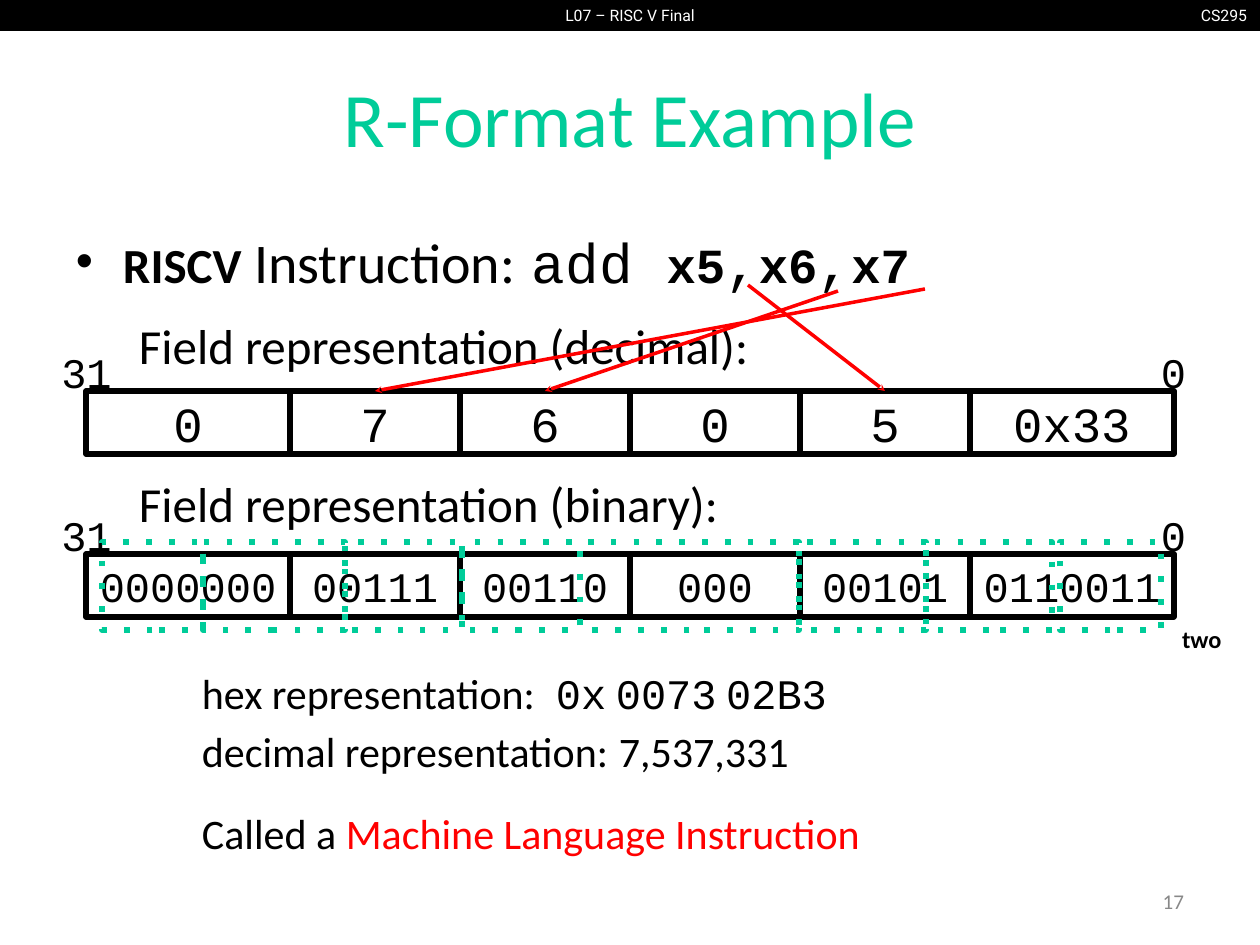
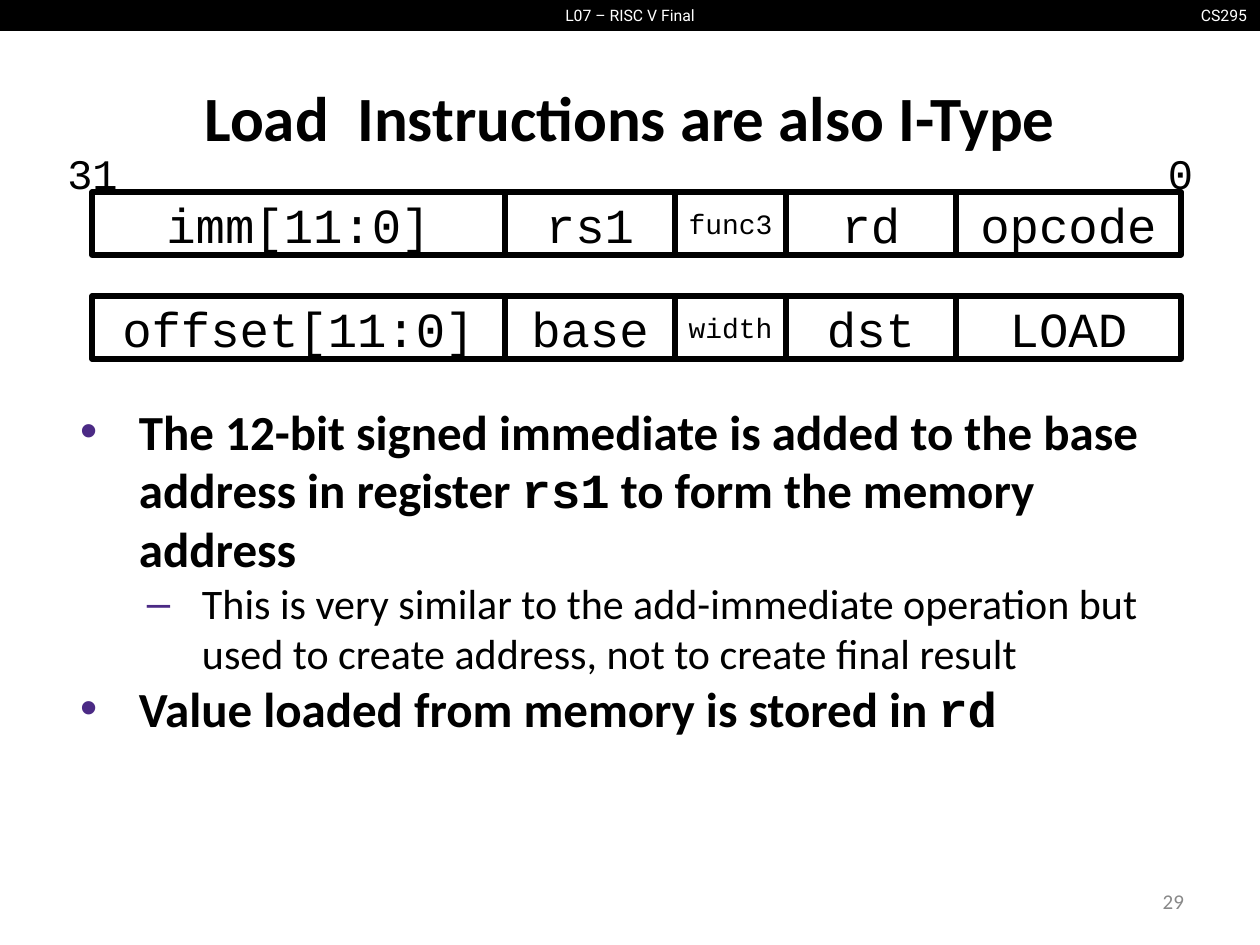
from dataclasses import dataclass
from itertools import accumulate, pairwise

from lxml import etree
from pptx import Presentation
from pptx import util as u
from pptx.dml.color import RGBColor
from pptx.enum import shapes, text
from pptx.oxml.ns import qn

PX = 914400 / 126


@dataclass(frozen=True)
class Theme:
    ink: str = "000000"
    paper: str = "FFFFFF"
    green: str = "00CC99"
    red: str = "FF0000"
    violet: str = "4B2A85"
    grey: str = "888888"
    sans: str = "Calibri"
    mono: str = "Courier New"
    band: str = "Roboto"
    title: int = 44
    heading: int = 36
    lead: int = 32
    large: int = 28
    medium: int = 24
    small: int = 16
    page: int = 12
    tiny: int = 9


T = Theme()


@dataclass
class Run:
    text: str
    size: int = T.large
    font: str = T.sans
    color: str = T.ink
    bold: bool = False
    baseline: int = 0


@dataclass
class Para:
    runs: list
    level: int = 0
    margin: int = 0
    hang: int = 0
    before: float = 0
    bullet: str = ""
    bullet_color: str = T.ink
    tab: int = 0
    align: text.PP_ALIGN = text.PP_ALIGN.LEFT


def emu(px):
    return u.Emu(round(px * PX))


def rgb(color):
    return RGBColor.from_string(color)


class Deck:
    def __init__(self):
        self.prs = Presentation()
        self.prs.slide_width, self.prs.slide_height = emu(1260), emu(945)
        self.slide = None

    def start(self, title, number):
        self.slide = self.prs.slides.add_slide(self.prs.slide_layouts[1])
        heading = self.slide.shapes.title
        self.place(heading, 63, 38, 1134, 157)
        centre = text.PP_ALIGN.CENTER
        self.fill_text(heading.text_frame, [Para([title], align=centre)], middle=True)
        self.rect(0, 0, 1260, 31, fill=T.ink)
        for label, left, width, align in (
            ("CS295", 1160, 100, text.PP_ALIGN.RIGHT),
            ("L07 – RISC V Final", 530, 200, centre),
        ):
            run = Run(label, T.tiny, T.band, T.paper)
            self.box(left, 0, width, 31, [Para([run], align=align)], pad=0, middle=True)
        page = Run(number, T.page, color=T.grey)
        self.box(903, 876, 294, 50, [Para([page], align=text.PP_ALIGN.RIGHT)], middle=True)

    def place(self, shape, left, top, width, height):
        shape.left, shape.top = emu(left), emu(top)
        shape.width, shape.height = emu(width), emu(height)

    def fill_text(self, frame, paras, side=13, pad=6, middle=False):
        frame.word_wrap = True
        frame.auto_size = text.MSO_AUTO_SIZE.NONE
        frame.margin_left = frame.margin_right = emu(side)
        frame.margin_top = frame.margin_bottom = emu(pad)
        frame.vertical_anchor = text.MSO_ANCHOR.MIDDLE if middle else text.MSO_ANCHOR.TOP
        for index, para in enumerate(paras):
            target = frame.add_paragraph() if index else frame.paragraphs[0]
            self.format_para(target, para)

    def format_para(self, target, para):
        props = target._p.get_or_add_pPr()
        props.set("marL", str(emu(para.margin)))
        props.set("indent", str(-emu(para.hang)))
        if para.bullet:
            color = etree.SubElement(props, qn("a:buClr"))
            etree.SubElement(color, qn("a:srgbClr"), val=para.bullet_color)
            etree.SubElement(props, qn("a:buFont"), typeface="Arial")
            etree.SubElement(props, qn("a:buChar"), char=para.bullet)
        else:
            etree.SubElement(props, qn("a:buNone"))
        if para.tab:
            tabs = etree.SubElement(props, qn("a:tabLst"))
            etree.SubElement(tabs, qn("a:tab"), pos=str(emu(para.tab)), algn="l")
        target.level = para.level
        target.alignment = para.align
        target.space_before = u.Pt(para.before)
        for style in para.runs:
            run = target.add_run()
            run.text = style.text
            run.font.name = style.font
            run.font.size = u.Pt(style.size)
            run.font.bold = style.bold
            run.font.color.rgb = rgb(style.color)
            if style.baseline:
                run.font._element.set("baseline", str(style.baseline))

    def body(self, left, top, width, height, paras, pad=6):
        holder = self.slide.placeholders[1]
        self.place(holder, left, top, width, height)
        self.fill_text(holder.text_frame, paras, pad=pad)

    def box(self, left, top, width, height, paras, **layout):
        box = self.slide.shapes.add_textbox(emu(left), emu(top), emu(width), emu(height))
        self.fill_text(box.text_frame, paras, **layout)

    def rect(self, left, top, width, height, fill=None, line=None, weight=3, dash=None):
        shape = self.slide.shapes.add_shape(
            shapes.MSO_SHAPE.RECTANGLE, emu(left), emu(top), emu(width), emu(height))
        shape.shadow.inherit = False
        if fill:
            shape.fill.solid()
            shape.fill.fore_color.rgb = rgb(fill)
        else:
            shape.fill.background()
        if line:
            shape.line.color.rgb = rgb(line)
            shape.line.width = u.Pt(weight)
        else:
            shape.line.fill.background()
        if dash:
            etree.SubElement(shape.line._get_or_add_ln(), qn("a:prstDash"), val=dash)
        return shape

    def fields(self, left, top, widths, labels, sizes):
        edges = list(accumulate(widths, initial=left))
        for start, width, label, size in zip(edges, widths, labels, sizes):
            cell = self.rect(start, top, width, 63, line=T.ink)
            run = Run(label, size, T.mono)
            para = Para([run], align=text.PP_ALIGN.CENTER)
            self.fill_text(cell.text_frame, [para], middle=True)
        return [(start + end) // 2 for start, end in pairwise(edges)]

    def bit_numbers(self, left, right, top):
        high, low = (Run(bit, T.medium, T.mono) for bit in ("31", "0"))
        self.box(left - 38, top - 50, 77, 63, [Para([high], align=text.PP_ALIGN.CENTER)])
        self.box(right - 26, top - 50, 50, 63, [Para([low])])

    def arrow(self, start, end):
        line = self.slide.shapes.add_connector(
            shapes.MSO_CONNECTOR.STRAIGHT, *map(emu, (*start, *end)))
        line.line.color.rgb = rgb(T.red)
        line.line.width = u.Pt(2)
        etree.SubElement(line.line._get_or_add_ln(), qn("a:tailEnd"),
                         type="stealth", w="sm", len="sm")
        etree.SubElement(line._element.spPr, qn("a:effectLst"))


def r_format_slide(deck):
    deck.start(Run("R-Format Example", T.title, color=T.green), "17")
    comma = Run(",", T.lead, T.mono)
    x5, x6, x7 = (Run(name, T.large, T.mono, bold=True) for name in ("x5", "x6", "x7"))
    instruction = [Run("RISCV", bold=True), Run(" Instruction:\t", T.lead),
                   Run("add ", T.lead, T.mono), x5, comma, x6, comma, x7]
    nested = {"level": 1, "margin": 102, "hang": 39}
    deck.body(63, 221, 1134, 433, [
        Para(instruction, margin=47, hang=47, bullet="•", tab=456),
        Para([Run("Field representation (decimal):")], before=12, **nested),
        Para([Run("Field representation (binary):")], before=57, **nested),
    ])

    left, decimal_top, binary_top = 86, 391, 554
    widths = [204, 170, 170, 170, 170, 204]
    right = left + sum(widths)
    decimal = ["0", "7", "6", "0", "5", "0x33"]
    binary = ["0000000", "00111", "00110", "000", "00101", "0110011"]
    centres = deck.fields(left, decimal_top, widths, decimal, [T.large] * 6)
    deck.fields(left, binary_top, widths, binary, [T.medium] * 6)
    for top in (decimal_top, binary_top):
        deck.bit_numbers(left, right, top)
    for start, field in (((748, 285), 4), ((925, 289), 1), ((838, 291), 2)):
        deck.arrow(start, (centres[field], decimal_top))

    nibbles = [*pairwise([102, 203, 345, 462, 580, 799, 926, 1052]), (1060, 1161)]
    for start, end in nibbles:
        deck.rect(start, 542, end - start, 88, line=T.green, weight=3.25, dash="dot")
    base = Run("two", T.medium, bold=True, baseline=-25000)
    deck.box(1169, 590, 71, 47, [Para([base])])

    space = Run(" ", T.medium)
    zero_x, upper, lower = (Run(part, T.medium, T.mono) for part in ("0x", "0073", "02B3"))
    deck.box(126, 654, 970, 222, [
        Para([Run("hex representation:\t", T.medium), zero_x, space, upper, space, lower],
             **nested),
        Para([Run("decimal representation:\t7,537,331", T.medium)], before=4.8, **nested),
        Para([Run("Called a ", T.medium),
              Run("Machine Language Instruction", T.medium, color=T.red)],
             before=18, **nested),
    ], pad=13)


def load_slide(deck):
    deck.start(Run("Load  Instructions are also I-Type", T.heading, bold=True), "29")
    main = {"margin": 63, "hang": 59, "bullet": "•", "bullet_color": T.violet}
    detail = {"level": 1, "margin": 126, "hang": 55, "bullet": "–", "bullet_color": T.violet}
    deck.body(63, 388, 1134, 500, [
        Para([Run("The 12-bit signed immediate is added to the base address in register ",
                  bold=True),
              Run("rs1", font=T.mono, bold=True),
              Run(" to form the memory address", bold=True)], **main),
        Para([Run("This is very similar to the add-immediate operation but used to "
                  "create address, not to create final result", T.medium)], **detail),
        Para([Run("Value loaded from memory is stored in ", bold=True),
              Run("rd", font=T.mono, bold=True)], **main),
    ], pad=13)

    left, top = 92, 192
    widths = [413, 170, 111, 170, 225]
    sizes = [T.large, T.large, T.small, T.large, T.large]
    deck.fields(left, top, widths, ["imm[11:0]", "rs1", "func3", "rd", "opcode"], sizes)
    deck.bit_numbers(left, left + sum(widths), top)
    deck.fields(left, 296, widths, ["offset[11:0]", "base", "width", "dst", "LOAD"], sizes)


def main():
    deck = Deck()
    r_format_slide(deck)
    load_slide(deck)
    deck.prs.save("out.pptx")


if __name__ == "__main__":
    main()
